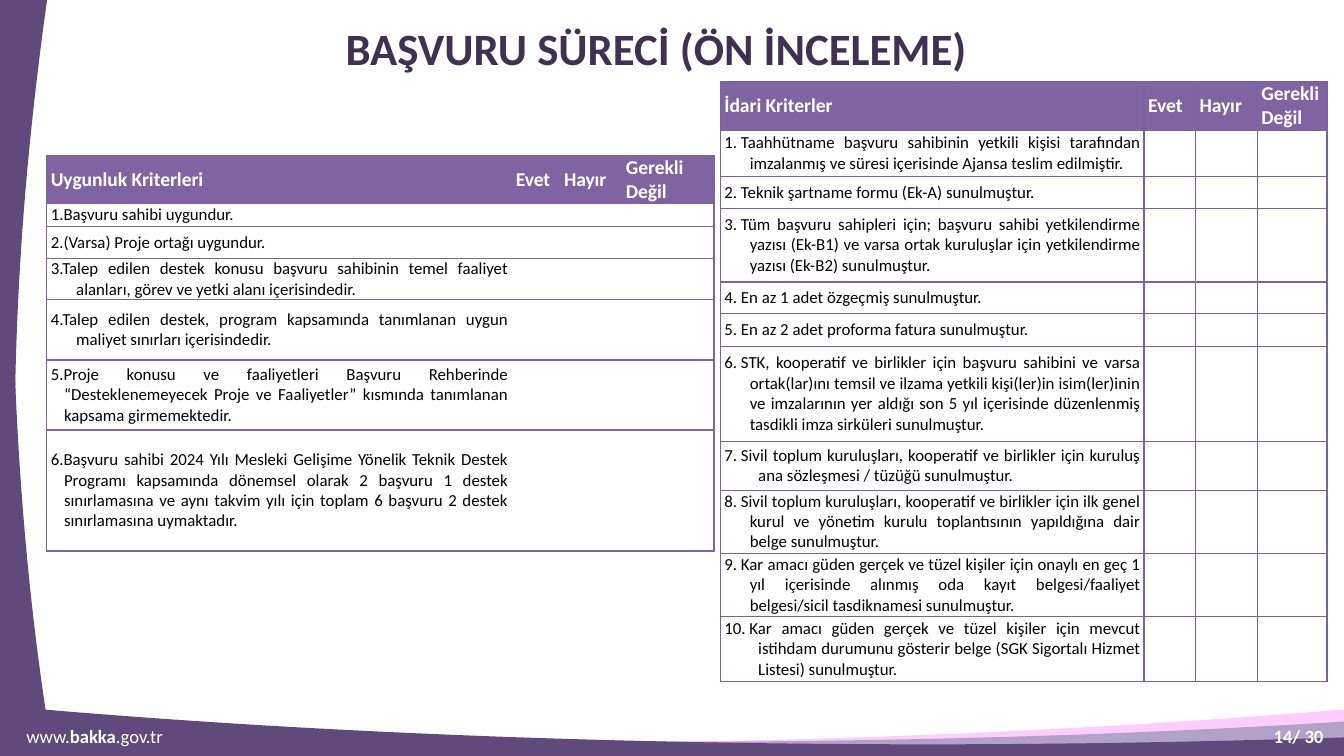
from lxml import etree
from pptx import Presentation
from pptx.dml.color import RGBColor
from pptx.enum.text import MSO_ANCHOR, PP_ALIGN
from pptx.oxml.ns import qn
from pptx.util import Cm, Pt

W, H, BAND_H = 25.4, 14.29, 14.1
FONT = "Calibri"
NBSP = chr(160)
WHITE = RGBColor(0xFF, 0xFF, 0xFF)
BLACK = RGBColor(0, 0, 0)
PINK = RGBColor(0xFF, 0xCC, 0xFF)
LILAC = RGBColor(0xB3, 0xA2, 0xC7)
PURPLE = RGBColor(0x60, 0x4A, 0x7B)
TITLE_COLOR = RGBColor(0x40, 0x31, 0x52)
HEADER = RGBColor(0x80, 0x64, 0xA2)
GRID = RGBColor(0x7D, 0x60, 0xA0)

# Content; each row is (height, hanging indent, text), lengths in cm
TITLE = "BAŞVURU SÜRECİ (ÖN İNCELEME)"
ANSWERS = ["Evet", "Hayır", "Gerekli Değil"]
ELIGIBILITY = dict(
    heading="Uygunluk Kriterleri", left=0.88, top=2.94, cols=[8.79, 0.91, 1.17, 1.75],
    header_height=0.91, gap="", line=HEADER, line_pt=1, inner_verticals=False,
    rows=[
        (0.43, 0.64, "Başvuru sahibi uygundur."),
        (0.61, 0.64, "(Varsa) Proje ortağı uygundur."),
        (0.77, 0.48, "Talep edilen destek konusu başvuru sahibinin temel faaliyet alanları, "
                     "görev ve yetki alanı içerisindedir."),
        (1.15, 0.48, "Talep edilen destek, program kapsamında tanımlanan uygun maliyet "
                     "sınırları içerisindedir."),
        (1.32, 0.25, "Proje konusu ve faaliyetleri Başvuru Rehberinde “Desteklenemeyecek "
                     "Proje ve Faaliyetler” kısmında tanımlanan kapsama girmemektedir."),
        (2.29, 0.25, "Başvuru sahibi 2024 Yılı Mesleki Gelişime Yönelik Teknik Destek Programı "
                     "kapsamında dönemsel olarak 2 başvuru 1 destek sınırlamasına ve aynı takvim "
                     "yılı için toplam 6 başvuru 2 destek sınırlamasına uymaktadır."),
    ])
ADMINISTRATIVE = dict(
    heading="İdari Kriterler", left=13.61, top=1.55, cols=[8.01, 0.97, 1.17, 1.32],
    header_height=0.91, gap=NBSP, line=GRID, line_pt=0.75, inner_verticals=True,
    rows=[
        (0.87, 0.48, "Taahhütname başvuru sahibinin yetkili kişisi tarafından imzalanmış ve "
                     "süresi içerisinde Ajansa teslim edilmiştir."),
        (0.61, 0.64, "Teknik şartname formu (Ek-A) sunulmuştur."),
        (1.39, 0.48, "Tüm başvuru sahipleri için; başvuru sahibi yetkilendirme yazısı (Ek-B1) "
                     "ve varsa ortak kuruluşlar için yetkilendirme yazısı (Ek-B2) sunulmuştur."),
        (0.59, 0.64, "En az 1 adet özgeçmiş sunulmuştur."),
        (0.63, 0.64, "En az 2 adet proforma fatura sunulmuştur."),
        (1.79, 0.48, "STK, kooperatif ve birlikler için başvuru sahibini ve varsa ortak(lar)ını "
                     "temsil ve ilzama yetkili kişi(ler)in isim(ler)inin ve imzalarının yer aldığı "
                     "son 5 yıl içerisinde düzenlenmiş tasdikli imza sirküleri sunulmuştur."),
        (0.93, 0.64, "Sivil toplum kuruluşları, kooperatif ve birlikler için kuruluş ana "
                     "sözleşmesi / tüzüğü sunulmuştur."),
        (1.19, 0.48, "Sivil toplum kuruluşları, kooperatif ve birlikler için ilk genel kurul ve "
                     "yönetim kurulu toplantısının yapıldığına dair belge sunulmuştur."),
        (1.2, 0.48, "Kar amacı güden gerçek ve tüzel kişiler için onaylı en geç 1 yıl içerisinde "
                    "alınmış oda kayıt belgesi/faaliyet belgesi/sicil tasdiknamesi sunulmuştur."),
        (1.22, 0.64, "Kar amacı güden gerçek ve tüzel kişiler için mevcut istihdam durumunu "
                     "gösterir belge (SGK Sigortalı Hizmet Listesi) sunulmuştur."),
    ])

# Curved edges: start, then (control, control, end) per Bézier piece
WAVES = [
    (PINK, [(W, 13.41), (20.45, 13.82), (15.27, 14.05), (9.22, 14.05),
            (5.54, 14.02), (2.74, 13.84), (0, 13.74)]),
    (LILAC, [(W, 13.64), (21.39, 13.89), (17.12, 14.02), (12.67, 14.02),
             (8.26, 14.02), (3.99, 13.89), (0, 13.64)]),
    (PURPLE, [(W, 13.94), (22.86, 14.02), (20.24, 14.07), (17.55, 14.07),
              (11.28, 14.07), (5.31, 13.82), (0, 13.34)]),
]
SIDE_BANDS = [
    [(0.66, 0), (0.43, 2.21), (0.28, 4.6), (0.28, 7.06),
     (0.28, 9.5), (0.43, 11.89), (0.66, BAND_H)],
    [(0.89, 0), (0.51, 2.74), (0.25, 5.61), (0.28, 8.97),
     (0.28, 11), (0.48, 12.57), (0.56, BAND_H)],
    [(0.38, 0), (0.28, 1.4), (0.23, 2.82), (0.23, 4.34),
     (0.23, 7.82), (0.48, 11.13), (0.97, BAND_H)],
]


def add_curved(s, color, edge, corners):
    outline = [(Cm(x), Cm(y)) for x, y in edge + corners]
    builder = s.shapes.build_freeform(*outline[0])
    builder.add_line_segments(outline[1:], close=True)
    sp = builder.convert_to_shape()
    # Turn each three line steps along the edge into one Bézier curve
    steps = list(sp._element.iter(qn("a:lnTo")))[:len(edge) - 1]
    for i in range(0, len(steps), 3):
        curve = etree.Element(qn("a:cubicBezTo"))
        steps[i].addprevious(curve)
        for step in steps[i:i + 3]:
            curve.append(step[0])
            step.getparent().remove(step)
    sp.shadow.inherit = False
    sp.fill.solid()
    sp.fill.fore_color.rgb = color
    sp.line.fill.background()


def add_run(p, text, size, color, bold):
    r = p.add_run()
    r.text = text
    r.font.name, r.font.size, r.font.bold = FONT, Pt(size), bold
    r.font.color.rgb = color


def add_text(s, box, runs, size, color, align):
    tf = s.shapes.add_textbox(*map(Cm, box)).text_frame
    tf.word_wrap = True
    tf.vertical_anchor = MSO_ANCHOR.MIDDLE
    tf.margin_left = tf.margin_right = tf.margin_top = tf.margin_bottom = 0
    p = tf.paragraphs[0]
    p.alignment = align
    for text, bold in runs:
        add_run(p, text, size, color, bold)


def set_border(cell, side, color, width):
    ln = etree.SubElement(cell._tc.get_or_add_tcPr(), qn(f"a:ln{side}"), w=str(Pt(width)))
    if color is None:
        etree.SubElement(ln, qn("a:noFill"))
    else:
        fill = etree.SubElement(ln, qn("a:solidFill"))
        etree.SubElement(fill, qn("a:srgbClr"), val=str(color))


def add_criteria(s, criteria):
    cols, rows = criteria["cols"], criteria["rows"]
    heights = [criteria["header_height"]] + [row[0] for row in rows]
    table = s.shapes.add_table(len(heights), len(cols), Cm(criteria["left"]), Cm(criteria["top"]),
                               Cm(sum(cols)), Cm(sum(heights))).table
    table.horz_banding = table.first_row = False
    for column, width in zip(table.columns, cols):
        column.width = Cm(width)
    texts = [[criteria["heading"]] + ANSWERS]
    texts += [[f"{n}.{criteria['gap']}{row[2]}", "", "", ""] for n, row in enumerate(rows, 1)]
    for i, height in enumerate(heights):
        table.rows[i].height = Cm(height)
        for j, text in enumerate(texts[i]):
            cell = table.cell(i, j)
            cell.margin_left = cell.margin_right = Cm(0.08)
            cell.margin_top = cell.margin_bottom = 0
            cell.vertical_anchor = MSO_ANCHOR.MIDDLE
            # Borders precede the fill in the cell properties
            for side in "LRTB":
                outer = side in "TB" or (side, j) in (("L", 0), ("R", len(cols) - 1))
                shown = outer or criteria["inner_verticals"]
                set_border(cell, side, criteria["line"] if shown else None, criteria["line_pt"])
            cell.fill.solid()
            cell.fill.fore_color.rgb = WHITE if i else HEADER
            p = cell.text_frame.paragraphs[0]
            if not text:
                etree.SubElement(p._p, qn("a:endParaRPr"), sz="900")
            elif i == 0:
                add_run(p, text, 10.5, WHITE, True)
            else:
                indent = Cm(rows[i - 1][1])
                p.alignment = PP_ALIGN.JUSTIFY
                pPr = p._p.get_or_add_pPr()
                pPr.set("marL", str(indent))
                pPr.set("indent", str(-indent))
                add_run(p, text, 9, BLACK, False)


def main():
    prs = Presentation()
    prs.slide_width, prs.slide_height = Cm(W), Cm(H)
    s = prs.slides.add_slide(prs.slide_layouts[6])

    # Background curves
    for color, edge in WAVES:
        add_curved(s, color, edge, [(0, H), (W, H)])
    for edge in SIDE_BANDS:
        add_curved(s, PURPLE, edge, [(0, BAND_H), (0, 0)])

    # Title and footer
    add_text(s, (2.1, 0.25, 20.6, 1.3), [(TITLE, True)], 24, TITLE_COLOR, PP_ALIGN.CENTER)
    add_text(s, (0.5, 13.7, 3.4, 0.43), [("www.", False), ("bakka", True), (".gov.tr", False)],
             10, WHITE, PP_ALIGN.LEFT)
    add_text(s, (24.03, 13.7, 1.02, 0.43), [("14/ 30", True)], 10, WHITE, PP_ALIGN.CENTER)

    # Criteria tables
    for criteria in (ELIGIBILITY, ADMINISTRATIVE):
        add_criteria(s, criteria)
    prs.save("out.pptx")


if __name__ == "__main__":
    main()
